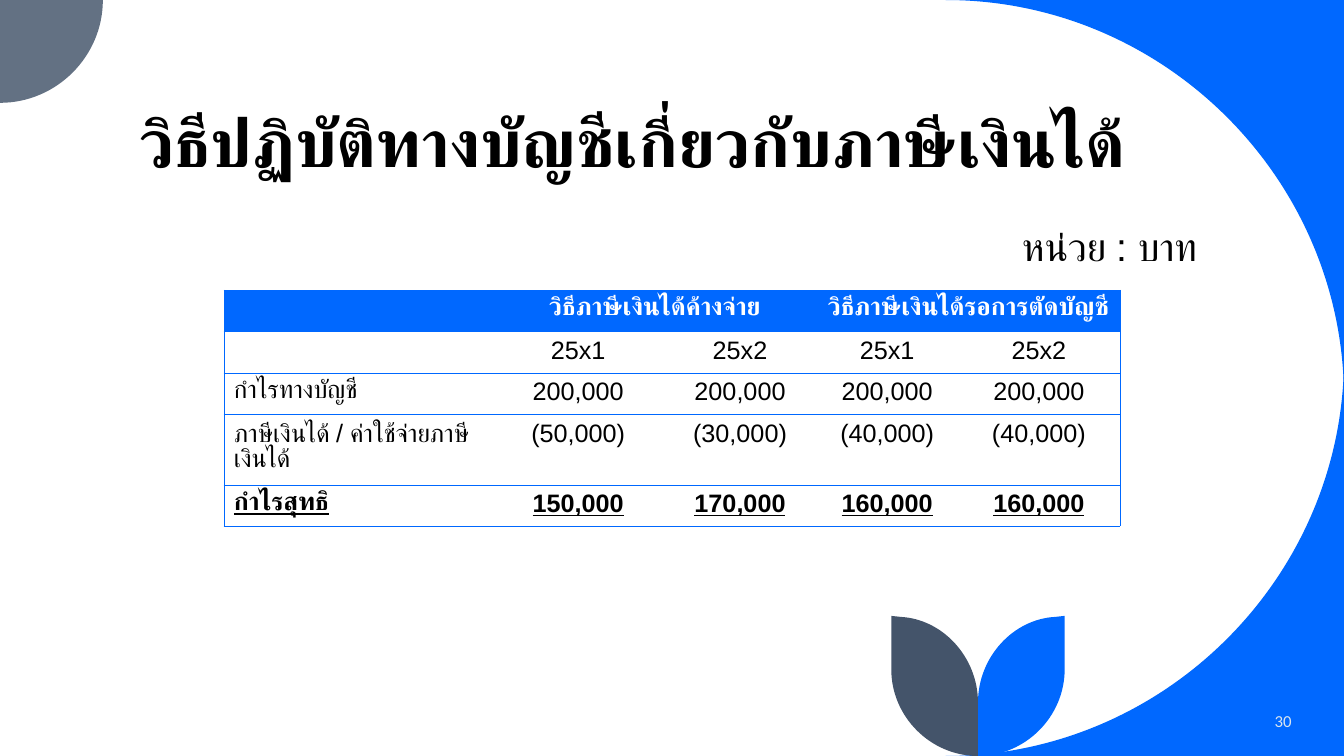
from lxml import etree
from pptx import Presentation
from pptx.dml.color import RGBColor
from pptx.enum.text import MSO_ANCHOR, MSO_AUTO_SIZE, PP_ALIGN
from pptx.oxml.ns import qn
from pptx.util import Pt

PX = 9144
LEFT, CENTER, RIGHT = PP_ALIGN.LEFT, PP_ALIGN.CENTER, PP_ALIGN.RIGHT
TOP, MIDDLE, BOTTOM = MSO_ANCHOR.TOP, MSO_ANCHOR.MIDDLE, MSO_ANCHOR.BOTTOM
NO_FIT = MSO_AUTO_SIZE.NONE

BLUE, SLATE, GREY = "0068FF", "44546A", "637183"
BLACK, WHITE, PALE = "000000", "FFFFFF", "DAE5EF"
ROUND = 0.55
PLAIN_TABLE = "{2D5ABB26-0587-4C30-8999-92F81FD0307C}"

COLUMN_WIDTHS = [267, 169, 152, 140, 161]
ROW_HEIGHT = 41
ROW_BORDERS = ["T", "TB", "", "TB", "B"]
ROWS = [
    ["", "วิธีภาษีเงินได้ค้างจ่าย", "", "วิธีภาษีเงินได้รอการตัดบัญชี", ""],
    ["", "25x1", "25x2", "25x1", "25x2"],
    ["กำไรทางบัญชี", "200,000", "200,000", "200,000", "200,000"],
    ["ภาษีเงินได้ / ค่าใช้จ่ายภาษีเงินได้", "(50,000)", "(30,000)", "(40,000)", "(40,000)"],
    ["กำไรสุทธิ", "150,000", "170,000", "160,000", "160,000"],
]


def color(value):
    return RGBColor.from_string(value)


def write(para, text, size, tint, align=LEFT, bold=False, underline=False, font="Arial"):
    para.alignment = align
    span = para.add_run()
    span.text = text
    span.font.size = Pt(size)
    span.font.name = font
    span.font.bold = bold
    span.font.underline = underline
    span.font.color.rgb = color(tint)


def quarter(start, corner, end):
    def toward(point):
        return tuple(round(p + (c - p) * ROUND) for p, c in zip(point, corner))

    return [toward(start), toward(end), end]


def draw_outline(page, start, segments, tint):
    builder = page.shapes.build_freeform(*start, scale=PX)
    builder.add_line_segments([point for part in segments for point in part], close=True)
    shape = builder.convert_to_shape()
    shape.shadow.inherit = False
    shape.fill.solid()
    shape.fill.fore_color.rgb = color(tint)
    shape.line.fill.background()

    lines = iter(list(shape.element.iter(qn("a:lnTo"))))
    for part in segments:
        steps = [next(lines) for _ in part]
        if len(steps) == 3:
            curve = etree.Element(qn("a:cubicBezTo"))
            steps[0].addprevious(curve)
            for step in steps:
                curve.append(step[0])
                step.getparent().remove(step)


def add_corner(page, box, place, tint):
    left, top, size = box
    right, bottom = left + size, top + size
    start, corner, end, tip = {
        "top right": ((left, top), (right, top), (right, bottom), (right, top)),
        "bottom right": ((right, top), (right, bottom), (left, bottom), (right, bottom)),
        "top left": ((right, top), (right, bottom), (left, bottom), (left, top)),
    }[place]
    draw_outline(page, start, [quarter(start, corner, end), [tip]], tint)


def add_leaf(page, stem, top, width, height, side, tint):
    bottom, edge = top + height, stem + side * width
    low, high = (edge, bottom - width), (stem, top + width)
    segments = [
        [low],
        quarter(low, (edge, bottom), (stem, bottom)),
        [high],
        quarter(high, (stem, top + 4), (edge - side * 9, top + 1)),
    ]
    draw_outline(page, (edge, top), segments, tint)


def add_decoration(page, width, height):
    size = 395
    add_corner(page, (width - size, 0, size), "top right", BLUE)
    add_corner(page, (width - size, height - size, size), "bottom right", BLUE)
    add_corner(page, (0, 0, 102), "top left", GREY)
    for side, tint in ((1, BLUE), (-1, SLATE)):
        add_leaf(page, 970, height - 139, 86, 139, side, tint)


def fill_placeholder(page, shape, box, anchor, text, size, align, bold, before):
    shape.left, shape.top, shape.width, shape.height = (n * PX for n in box)
    page.shapes.element.append(shape.element)
    frame = shape.text_frame
    frame.auto_size = NO_FIT
    frame.word_wrap = True
    frame.vertical_anchor = anchor
    para = frame.paragraphs[0]
    para.line_spacing = 0.9
    para.space_before = Pt(before)
    write(para, text, size, BLACK, align, bold)
    settings = para._p.get_or_add_pPr()
    settings.set("marL", "0")
    settings.set("indent", "0")
    etree.SubElement(settings, qn("a:buNone"))


def add_page_number(page, box, text):
    shape = page.shapes.add_textbox(*(n * PX for n in box))
    frame = shape.text_frame
    frame.word_wrap = True
    frame.vertical_anchor = MIDDLE
    write(frame.paragraphs[0], text, 12, PALE, RIGHT, font="Calibri")


def set_borders(cell, sides):
    settings = cell._tc.get_or_add_tcPr()
    for side in "LRTB":
        if side in sides:
            line = etree.SubElement(settings, qn(f"a:ln{side}"), w=str(Pt(0.5)))
            fill = etree.SubElement(line, qn("a:solidFill"))
            etree.SubElement(fill, qn("a:srgbClr"), val=BLUE)


def add_profit_table(page, left, top):
    count = len(COLUMN_WIDTHS)
    frame = page.shapes.add_table(
        len(ROWS), count, left * PX, top * PX,
        sum(COLUMN_WIDTHS) * PX, ROW_HEIGHT * len(ROWS) * PX)
    table = frame.table
    table.horz_banding = False
    next(table._tbl.iter(qn("a:tableStyleId"))).text = PLAIN_TABLE
    for column, width in zip(table.columns, COLUMN_WIDTHS):
        column.width = width * PX
    for row in table.rows:
        row.height = ROW_HEIGHT * PX
    for start in (1, 3):
        table.cell(0, start).merge(table.cell(0, start + 1))

    for r, texts in enumerate(ROWS):
        header, total = r == 0, r == len(ROWS) - 1
        for c, text in enumerate(texts):
            cell = table.cell(r, c)
            last = c == count - 1 or (header and c == 3)
            set_borders(cell, ROW_BORDERS[r] + "L" * (c == 0) + "R" * last)
            if header:
                cell.fill.solid()
                cell.fill.fore_color.rgb = color(BLUE)
            else:
                cell.fill.background()
            if text:
                write(cell.text_frame.paragraphs[0], text, 18,
                      WHITE if header else BLACK, CENTER if c else LEFT,
                      bold=header or total, underline=total)


def main():
    width, height = 1333, 750
    deck = Presentation()
    deck.slide_width, deck.slide_height = width * PX, height * PX
    page = deck.slides.add_slide(deck.slide_layouts[1])
    page.background.fill.solid()
    page.background.fill.fore_color.rgb = color(WHITE)
    add_decoration(page, width, height)
    fill_placeholder(page, page.shapes.title, (128, 62, 1069, 124), BOTTOM,
                     "วิธีปฏิบัติทางบัญชีเกี่ยวกับภาษีเงินได้", 48, LEFT, True, 0)
    fill_placeholder(page, page.placeholders[1], (128, 221, 1069, 396), TOP,
                     "หน่วย : บาท", 28, RIGHT, False, 10)
    add_page_number(page, (1110, 695, 181, 40), "30")
    add_profit_table(page, 222, 288)
    deck.save("out.pptx")


if __name__ == "__main__":
    main()
